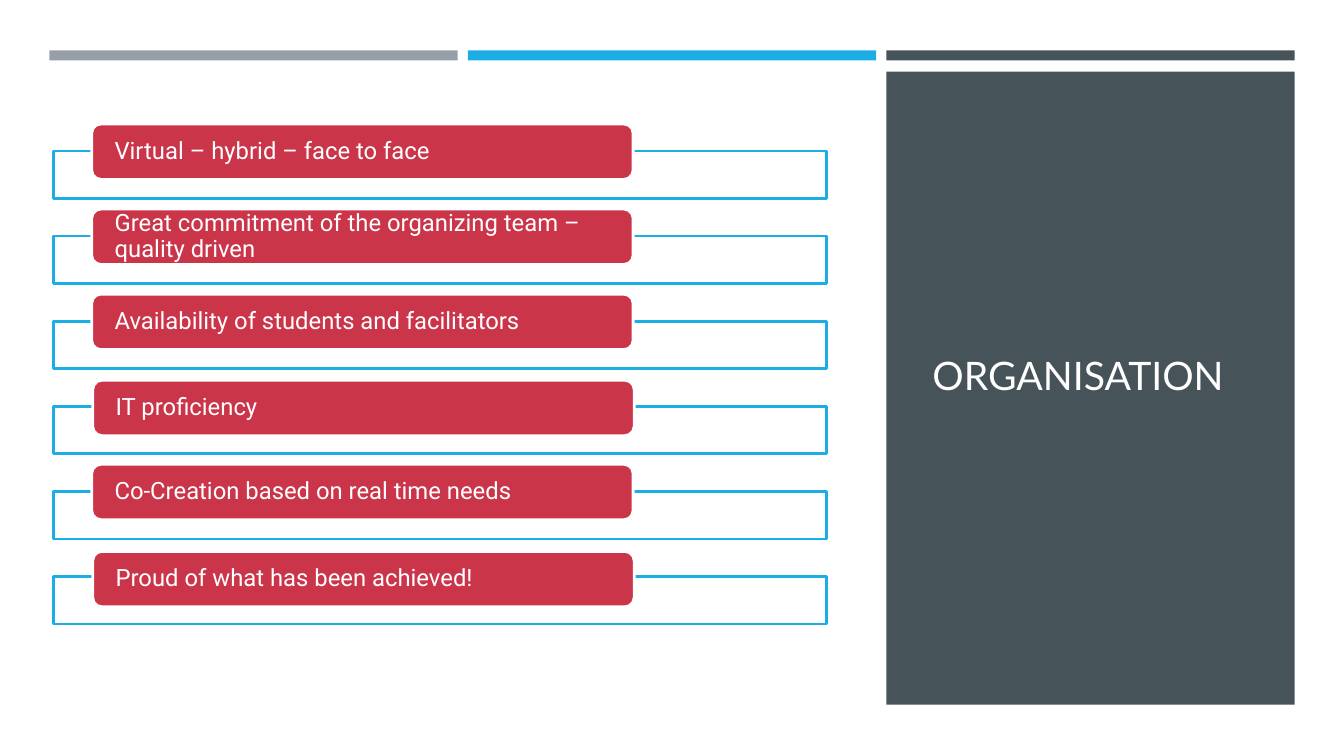
from pptx import Presentation
from pptx.dml.color import RGBColor
from pptx.enum.shapes import MSO_SHAPE as SHAPE
from pptx.enum.text import MSO_ANCHOR as ANCHOR, PP_ALIGN as ALIGN
from pptx.util import Inches, Pt

WHITE = RGBColor(0xFF, 0xFF, 0xFF)
TITLE_WHITE = RGBColor(0xFF, 0xFE, 0xFF)
SLATE = RGBColor(0x46, 0x53, 0x59)
GREY = RGBColor(0x96, 0x9F, 0xA7)
BLUE = RGBColor(0x1C, 0xAD, 0xE4)
RED = RGBColor(0xCB, 0x35, 0x4A)

FIRST_TOP, LAST_TOP = 1.5, 5.72
ITEMS = [
    ("Virtual – hybrid – face to face", 0, 0),
    ("Great commitment of the organizing team – quality driven", 0, 0),
    ("Availability of students and facilitators", 0, 0),
    ("IT proficiency", 0.01, 0.01),
    ("Co-Creation based on real time needs", 0, 0),
    ("Proud of what has been achieved!", 0.01, 0.02),
]


def add_box(s, kind, left, top, width, height, fill, line=None, weight=0):
    sp = s.shapes.add_shape(kind, Inches(left), Inches(top), Inches(width), Inches(height))
    sp.shadow.inherit = False
    sp.fill.solid()
    sp.fill.fore_color.rgb = fill
    if line is None:
        sp.line.fill.background()
    else:
        sp.line.color.rgb = line
        sp.line.width = Pt(weight)
    return sp


def write(sp, text, font, size, color):
    tf = sp.text_frame
    tf.word_wrap = True
    tf.vertical_anchor = ANCHOR.MIDDLE
    p = tf.paragraphs[0]
    p.alignment = ALIGN.LEFT
    r = p.add_run()
    r.text = text
    r.font.name = font
    r.font.size = Pt(size)
    r.font.color.rgb = color
    return tf


def add_item(s, top, text, dx, dy):
    add_box(s, SHAPE.RECTANGLE, 0.53, top, 7.67, 0.47, WHITE, BLUE, 1.75)
    pill = add_box(s, SHAPE.ROUNDED_RECTANGLE, 0.91 + dx, top - 0.27 + dy, 5.37, 0.55, RED, WHITE, 2)
    tf = write(pill, text, "Roboto", 17, WHITE)
    tf.margin_left = tf.margin_right = Inches(0.2)
    tf.margin_top = tf.margin_bottom = 0
    tf.paragraphs[0].line_spacing = 0.9


def add_title(s, text):
    sp = s.shapes.add_textbox(Inches(9.15), Inches(1.14), Inches(3.29), Inches(5.15))
    write(sp, text, "Lato", 28, TITLE_WHITE)


def main():
    prs = Presentation()
    prs.slide_width, prs.slide_height = Inches(13.33), Inches(7.5)
    s = prs.slides.add_slide(prs.slide_layouts[6])
    for i, color in enumerate((GREY, BLUE, SLATE)):
        add_box(s, SHAPE.RECTANGLE, 0.49 + 4.15 * i, 0.5, 4.05, 0.1, color)
    add_box(s, SHAPE.RECTANGLE, 8.79, 0.71, 4.05, 6.28, SLATE)
    add_title(s, "ORGANISATION")
    pitch = (LAST_TOP - FIRST_TOP) / (len(ITEMS) - 1)
    for i, (text, dx, dy) in enumerate(ITEMS):
        add_item(s, FIRST_TOP + pitch * i, text, dx, dy)
    prs.save("out.pptx")


if __name__ == "__main__":
    main()
